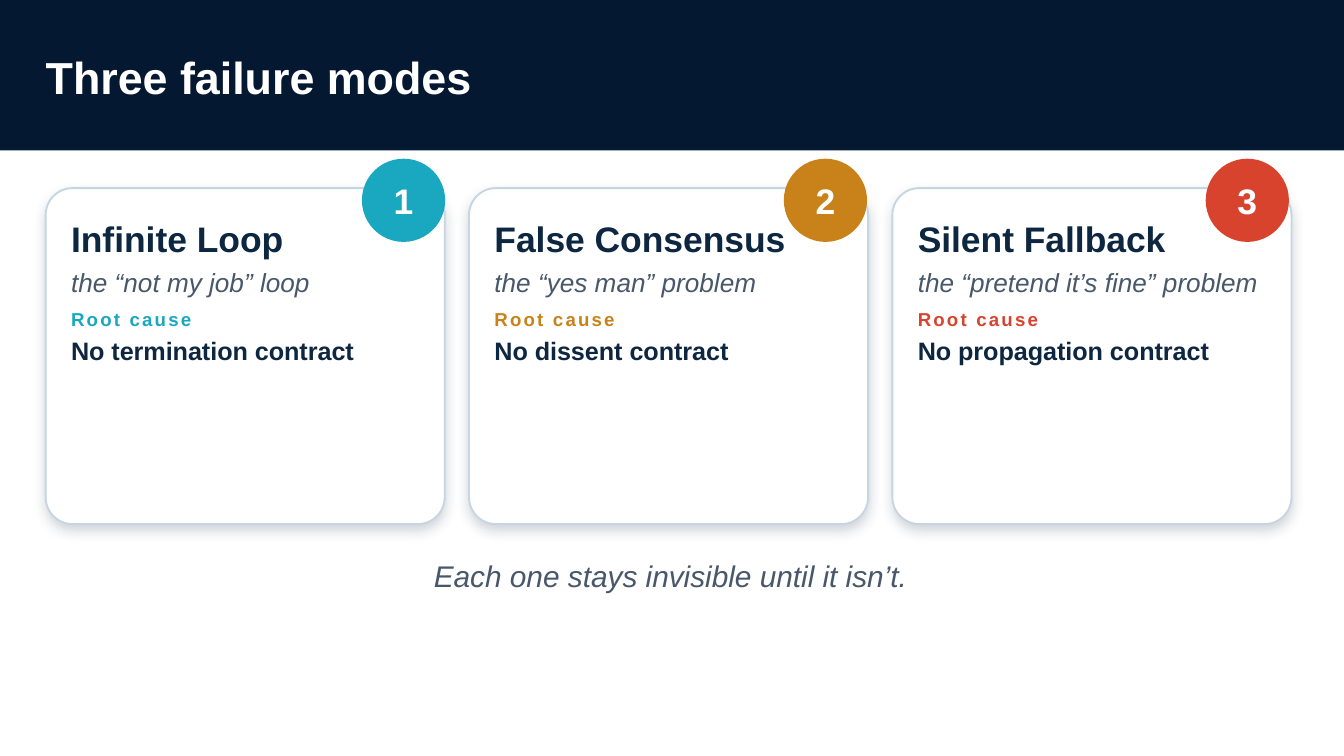
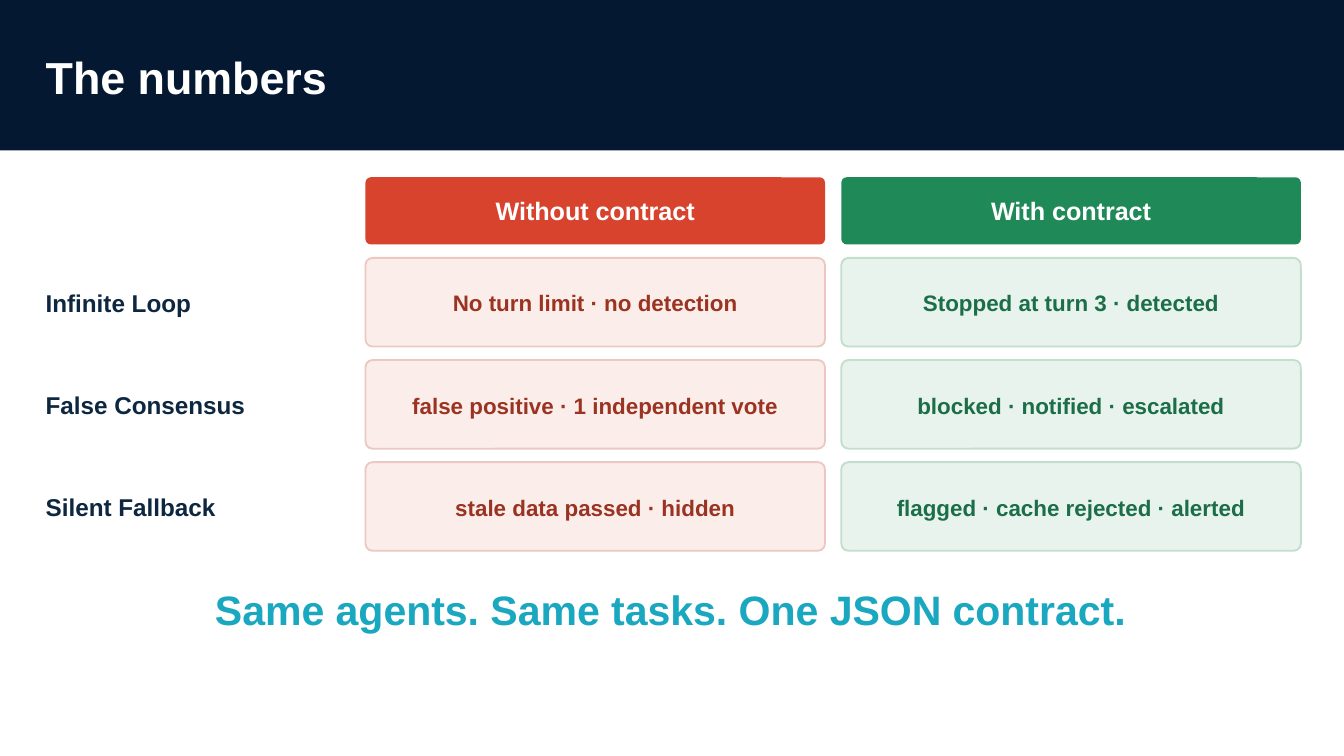
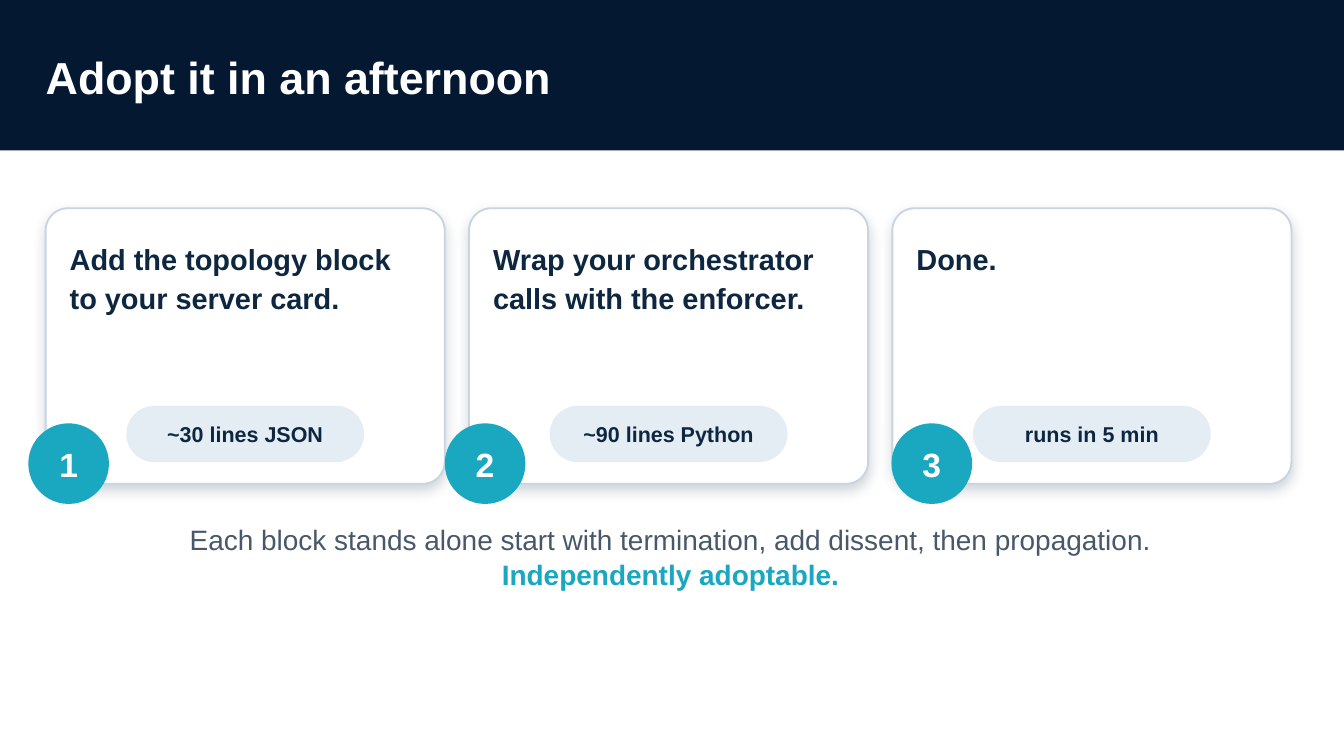
from lxml import etree
from pptx import Presentation
from pptx import util as u
from pptx.dml.color import RGBColor
from pptx.enum import shapes, text
from pptx.oxml import ns

Pt = u.Pt
Shape = shapes.MSO_SHAPE
CENTER = text.PP_ALIGN.CENTER
MIDDLE = text.MSO_ANCHOR.MIDDLE
TOP = text.MSO_ANCHOR.TOP

WHITE = RGBColor(0xFF, 0xFF, 0xFF)
BAND = RGBColor(0x05, 0x18, 0x32)
INK = RGBColor(0x0E, 0x27, 0x40)
GREY = RGBColor(0x48, 0x58, 0x6A)
TEAL = RGBColor(0x1A, 0xA7, 0xC0)
AMBER = RGBColor(0xC9, 0x82, 0x1A)
RED = RGBColor(0xD8, 0x43, 0x2E)
RED_INK = RGBColor(0x9B, 0x33, 0x22)
RED_TINT = RGBColor(0xFB, 0xED, 0xEA)
RED_EDGE = RGBColor(0xEB, 0xC9, 0xC2)
GREEN = RGBColor(0x1F, 0x8A, 0x57)
GREEN_INK = RGBColor(0x1B, 0x6E, 0x47)
GREEN_TINT = RGBColor(0xE7, 0xF3, 0xEC)
GREEN_EDGE = RGBColor(0xC2, 0xDF, 0xCD)
CARD_EDGE = RGBColor(0xC7, 0xD5, 0xE2)
PILL = RGBColor(0xE5, 0xED, 0xF4)

WIDTH, HEIGHT = 720, 405
MARGIN = 24.5
CARD_WIDTH, CARD_STEP = 213.8, 226.8
PARAGRAPH_KEYS = ("alignment", "line_spacing", "space_before")


def line(words, size, color, bold=True, **extra):
    """One paragraph: its words and its format values."""
    return words, dict(size=Pt(size), color=color, bold=bold, **extra)


class Deck:
    """Holds the shared style and the slide being built."""

    font = "Arial"

    def __init__(self):
        self.deck = Presentation()
        self.deck.slide_width, self.deck.slide_height = Pt(WIDTH), Pt(HEIGHT)
        self.page = None

    def start(self, title):
        self.page = self.deck.slides.add_slide(self.deck.slide_layouts[6])
        self.shape(Shape.RECTANGLE, (0, 0, WIDTH, 80.6), BAND)
        self.label((MARGIN, 8.6, 648, 64.8), [line(title, 24, WHITE)], MIDDLE)

    def set_text(self, box, lines, anchor, insets=(0, 0, 0, 0)):
        frame = box.text_frame
        frame.word_wrap = True
        frame.vertical_anchor = anchor
        for side, inset in zip(("left", "top", "right", "bottom"), insets):
            setattr(frame, "margin_" + side, Pt(inset))
        for index, (words, values) in enumerate(lines):
            para = frame.add_paragraph() if index else frame.paragraphs[0]
            para.alignment = text.PP_ALIGN.LEFT
            span = para.add_run()
            span.text = words
            span.font.name = self.font
            for key, value in values.items():
                if key in PARAGRAPH_KEYS:
                    setattr(para, key, value)
                elif key == "color":
                    span.font.color.rgb = value
                elif key == "tracking":
                    span._r.get_or_add_rPr().set("spc", str(round(value * 100)))
                else:
                    setattr(span.font, key, value)

    def label(self, area, lines, anchor=TOP):
        box = self.page.shapes.add_textbox(*map(Pt, area))
        self.set_text(box, lines, anchor)

    def shape(self, kind, area, fill, edge=None, radius=None):
        box = self.page.shapes.add_shape(kind, *map(Pt, area))
        box.shadow.inherit = False
        box.fill.solid()
        box.fill.fore_color.rgb = fill
        if edge is None:
            box.line.fill.background()
        else:
            box.line.color.rgb = edge
            box.line.width = Pt(1)
        if radius is not None:
            box.adjustments[0] = radius
        return box

    def card(self, column, top, height, lines):
        area = (MARGIN + column * CARD_STEP, top, CARD_WIDTH, height)
        box = self.shape(Shape.ROUNDED_RECTANGLE, area, WHITE, CARD_EDGE, 0.08)
        self.set_text(box, lines, TOP, (9.4, 11.5, 9.4, 3.6))
        # Soft shadow straight below the card
        effects = box._element.spPr.find(ns.qn("a:effectLst"))
        shadow = etree.SubElement(effects, ns.qn("a:outerShdw"), blurRad=str(Pt(7.1)),
                                  dist=str(Pt(3)), dir="5400000", rotWithShape="0")
        color = etree.SubElement(shadow, ns.qn("a:srgbClr"), val=str(INK))
        etree.SubElement(color, ns.qn("a:alpha"), val="20000")

    def badge(self, left, top, side, number, size, fill):
        box = self.shape(Shape.OVAL, (left, top, side, side), fill)
        self.set_text(box, [line(str(number), size, WHITE, alignment=CENTER)], MIDDLE)

    def block(self, area, words, size, color, fill, edge=None, radius=0.08, **extra):
        box = self.shape(Shape.ROUNDED_RECTANGLE, area, fill, edge, radius)
        self.set_text(box, [line(words, size, color, alignment=CENTER, **extra)],
                      MIDDLE, (3.6, 1.4, 3.6, 1.4))

    def closing(self, top, height, lines):
        for _, values in lines:
            values["alignment"] = CENTER
        self.label((MARGIN, top, 669.6, height), lines)


def failure_modes(deck):
    deck.start("Three failure modes")
    modes = [
        ("Infinite Loop", "the “not my job” loop", "No termination contract", TEAL),
        ("False Consensus", "the “yes man” problem", "No dissent contract", AMBER),
        ("Silent Fallback", "the “pretend it’s fine” problem", "No propagation contract", RED),
    ]
    for column, (name, nickname, cause, accent) in enumerate(modes):
        deck.card(column, 100.8, 180, [
            line(name, 19, INK),
            line(nickname, 14, GREY, False, italic=True, line_spacing=1.1, space_before=Pt(2)),
            line("Root cause", 10, accent, tracking=1.2, space_before=Pt(5.2)),
            line(cause, 13.5, INK, line_spacing=1.08, space_before=Pt(1.2)),
        ])
        deck.badge(193.9 + column * 226, 85, 44.6, column + 1, 19, accent)
    deck.closing(298.8, 36, [line("Each one stays invisible until it isn’t.", 16, GREY, False,
                                  italic=True)])


def numbers(deck):
    deck.start("The numbers")
    cell_width = 246.2
    # Column: left, heading, heading fill, cell text, cell fill, cell edge
    columns = [
        (195.8, "Without contract", RED, RED_INK, RED_TINT, RED_EDGE),
        (450.7, "With contract", GREEN, GREEN_INK, GREEN_TINT, GREEN_EDGE),
    ]
    rows = [
        ("Infinite Loop", "No turn limit · no detection", "Stopped at turn 3 · detected"),
        ("False Consensus", "false positive · 1 independent vote",
         "blocked · notified · escalated"),
        ("Silent Fallback", "stale data passed · hidden", "flagged · cache rejected · alerted"),
    ]
    for left, heading, fill, *_ in columns:
        deck.block((left, 95, cell_width, 36), heading, 13.5, WHITE, fill)
    for row, (name, *results) in enumerate(rows):
        top = 138.2 + row * 54.7
        deck.label((MARGIN, top, 162, 47.5), [line(name, 13, INK, line_spacing=1.04)], MIDDLE)
        for result, (left, _, _, ink, tint, edge) in zip(results, columns):
            deck.block((left, top, cell_width, 47.5), result, 12, ink, tint, edge,
                       line_spacing=1.06)
    deck.closing(313.2, 43.2, [line("Same agents. Same tasks. One JSON contract.", 22, TEAL)])


def adoption(deck):
    deck.start("Adopt it in an afternoon")
    # Step: instruction, effort, left of its badge
    steps = [
        ("Add the topology block to your server card.", "~30 lines JSON", 15.2),
        ("Wrap your orchestrator calls with the enforcer.", "~90 lines Python", 238.3),
        ("Done.", "runs in 5 min", 477.6),
    ]
    for column, (instruction, effort, badge_left) in enumerate(steps):
        deck.card(column, 111.6, 147.6, [line(instruction, 15.5, INK, line_spacing=1.14)])
        deck.badge(badge_left, 226.8, 43.2, column + 1, 18, TEAL)
        deck.block((67.7 + column * CARD_STEP, 217.4, 127.4, 30.2), effort, 11.5, INK, PILL,
                   radius=0.5)
    deck.closing(277.2, 50.4, [
        line("Each block stands alone start with termination, add dissent, then propagation.",
             15, GREY, False, line_spacing=1.16),
        line("Independently adoptable.", 15, TEAL, space_before=Pt(0.6)),
    ])


def main():
    deck = Deck()
    for build in (failure_modes, numbers, adoption):
        build(deck)
    deck.deck.save("out.pptx")


if __name__ == "__main__":
    main()
